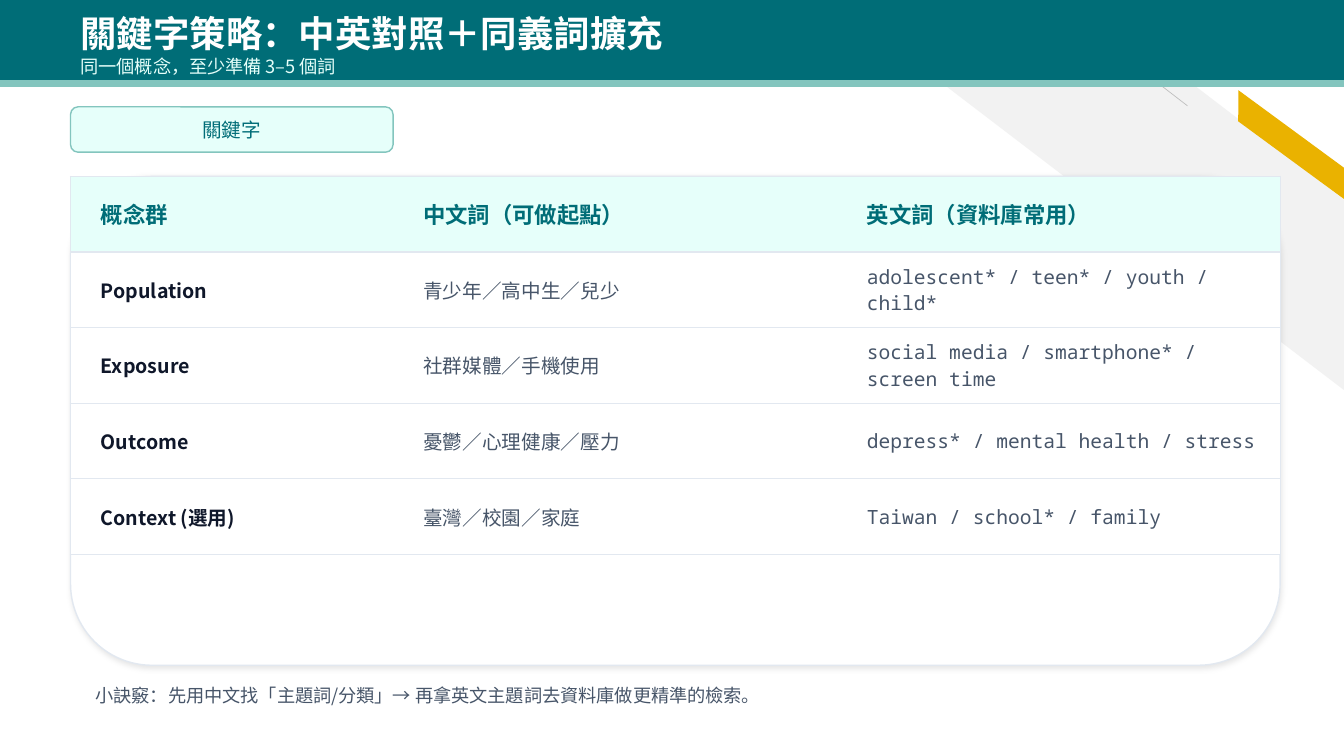
from lxml import etree
from pptx import Presentation
from pptx.dml.color import RGBColor
from pptx.enum import shapes, text
from pptx.oxml import ns
from pptx.util import Pt

SANS, MONO = "Noto Sans CJK TC", "Noto Sans Mono"
TEAL, AQUA, MINT, WHITE = "006D77", "83C5BE", "E6FFFA", "FFFFFF"
INK, SLATE, RULE = "0F172A", "475569", "E2E8F0"

TITLE = "關鍵字策略：中英對照＋同義詞擴充"
SUBTITLE = "同一個概念，至少準備 3–5 個詞"
TAG = "關鍵字"
TIP = "小訣竅：先用中文找「主題詞/分類」→ 再拿英文主題詞去資料庫做更精準的檢索。"
KEYWORDS = [
    ("概念群", "中文詞（可做起點）", "英文詞（資料庫常用）"),
    ("Population", "青少年／高中生／兒少", "adolescent* / teen* / youth / child*"),
    ("Exposure", "社群媒體／手機使用", "social media / smartphone* / screen time"),
    ("Outcome", "憂鬱／心理健康／壓力", "depress* / mental health / stress"),
    ("Context (選用)", "臺灣／校園／家庭", "Taiwan / school* / family"),
]
HEADER_STYLE = (16, TEAL, True, SANS)
COLUMN_STYLES = [(14, INK, True, SANS), (14, SLATE, False, SANS), (14, SLATE, False, MONO)]

WIDTH, HEIGHT = 960, 540
LEFT, CARD_TOP, CARD_WIDTH, CARD_HEIGHT = 50.4, 126, 864, 349.2
COLUMN_WIDTHS = [230.4, 316.8, 316.8]
ROW_HEIGHT = 54


def color(value):
    return RGBColor.from_string(value)


def add_xml(parent, tag, **attributes):
    return etree.SubElement(parent, ns.qn(tag), attributes)


def write(frame, words, size, ink, bold=False, font=SANS, align=text.PP_ALIGN.LEFT):
    paragraph = frame.paragraphs[0]
    paragraph.text = words
    paragraph.alignment = align
    paragraph.font.size = Pt(size)
    paragraph.font.bold = bold
    paragraph.font.color.rgb = color(ink)
    paragraph.font.name = font
    add_xml(paragraph.font._element, "a:ea", typeface=font)


def add_shape(kind, box, fill, line=None, adjustment=None, flip=False):
    shape = slide.shapes.add_shape(kind, *map(Pt, box))
    shape.shadow.inherit = False
    shape.fill.solid()
    shape.fill.fore_color.rgb = color(fill)
    if line:
        shape.line.color.rgb = color(line)
        shape.line.width = Pt(1)
    else:
        shape.line.fill.background()
    if adjustment is not None:
        shape.adjustments[0] = adjustment
    if flip:
        shape._element.spPr.find(ns.qn("a:xfrm")).set("flipH", "1")
    return shape


def add_text(box, words, *style):
    frame = slide.shapes.add_textbox(*map(Pt, box)).text_frame
    frame.word_wrap = True
    frame.vertical_anchor = text.MSO_ANCHOR.MIDDLE
    write(frame, words, *style)


def add_border(cell, side, visible):
    properties = cell._tc.get_or_add_tcPr()
    border = add_xml(properties, "a:" + side, w=str(Pt(1)))
    if visible:
        add_xml(add_xml(border, "a:solidFill"), "a:srgbClr", val=RULE)
    else:
        add_xml(border, "a:noFill")


def add_keyword_table():
    rows, columns = len(KEYWORDS), len(COLUMN_WIDTHS)
    table = slide.shapes.add_table(
        rows, columns, Pt(LEFT), Pt(CARD_TOP), Pt(CARD_WIDTH), Pt(ROW_HEIGHT * rows)
    ).table
    table.horz_banding = False
    for column, width in zip(table.columns, COLUMN_WIDTHS):
        column.width = Pt(width)
    for r, entry in enumerate(KEYWORDS):
        table.rows[r].height = Pt(ROW_HEIGHT)
        for c, words in enumerate(entry):
            cell = table.cell(r, c)
            cell.margin_left, cell.margin_right = Pt(21.6), Pt(14.4)
            cell.vertical_anchor = text.MSO_ANCHOR.MIDDLE
            add_border(cell, "lnL", c == 0)
            add_border(cell, "lnR", c == columns - 1)
            add_border(cell, "lnT", True)
            add_border(cell, "lnB", True)
            cell.fill.solid()
            cell.fill.fore_color.rgb = color(WHITE if r else MINT)
            write(cell.text_frame, words, *(COLUMN_STYLES[c] if r else HEADER_STYLE))


presentation = Presentation()
presentation.slide_width, presentation.slide_height = Pt(WIDTH), Pt(HEIGHT)
slide = presentation.slides.add_slide(presentation.slide_layouts[6])
preset = shapes.MSO_SHAPE

add_shape(preset.DIAGONAL_STRIPE, (595.2, 0, 364.8, 278.6), "F2F2F2", None, 0.512, True)
hairline = slide.shapes.add_connector(
    shapes.MSO_CONNECTOR.STRAIGHT, Pt(848.2), Pt(75.6), Pt(750.2), Pt(0))
hairline.line.color.rgb = color("BFBFBF")
hairline.line.width = Pt(0.5)
add_xml(hairline._element.spPr, "a:effectLst")
ribbon = add_shape(preset.PARALLELOGRAM, (869, 94.3, 106.6, 18), "EAB200", None, 0.72, True)
ribbon.rotation = 36.3

add_shape(preset.RECTANGLE, (0, 0, WIDTH, 57.6), TEAL, TEAL)
add_text((LEFT, 8.64, 828, 30.24), TITLE, 26, WHITE, True)
add_text((LEFT, 39.6, 828, 15.84), SUBTITLE, 13, MINT)
add_shape(preset.RECTANGLE, (0, 57.6, WIDTH, 4.32), AQUA, AQUA)

tag = add_shape(preset.ROUNDED_RECTANGLE, (LEFT, 76.32, 230.4, 32.4), MINT, AQUA)
tag.text_frame.vertical_anchor = text.MSO_ANCHOR.MIDDLE
write(tag.text_frame, TAG, 14, TEAL, False, SANS, text.PP_ALIGN.CENTER)

card = add_shape(
    preset.ROUNDED_RECTANGLE, (LEFT, CARD_TOP, CARD_WIDTH, CARD_HEIGHT), WHITE, RULE)
effects = card._element.spPr.find(ns.qn("a:effectLst"))
shadow = add_xml(effects, "a:outerShdw", blurRad=str(Pt(4)), dist=str(Pt(1.6)),
                 dir="2700000", algn="bl", rotWithShape="0")
add_xml(add_xml(shadow, "a:srgbClr", val="000000"), "a:alpha", val="10000")

add_keyword_table()
add_text((61.2, 483.84, CARD_WIDTH, 25.2), TIP, 13, SLATE)

presentation.save("out.pptx")
